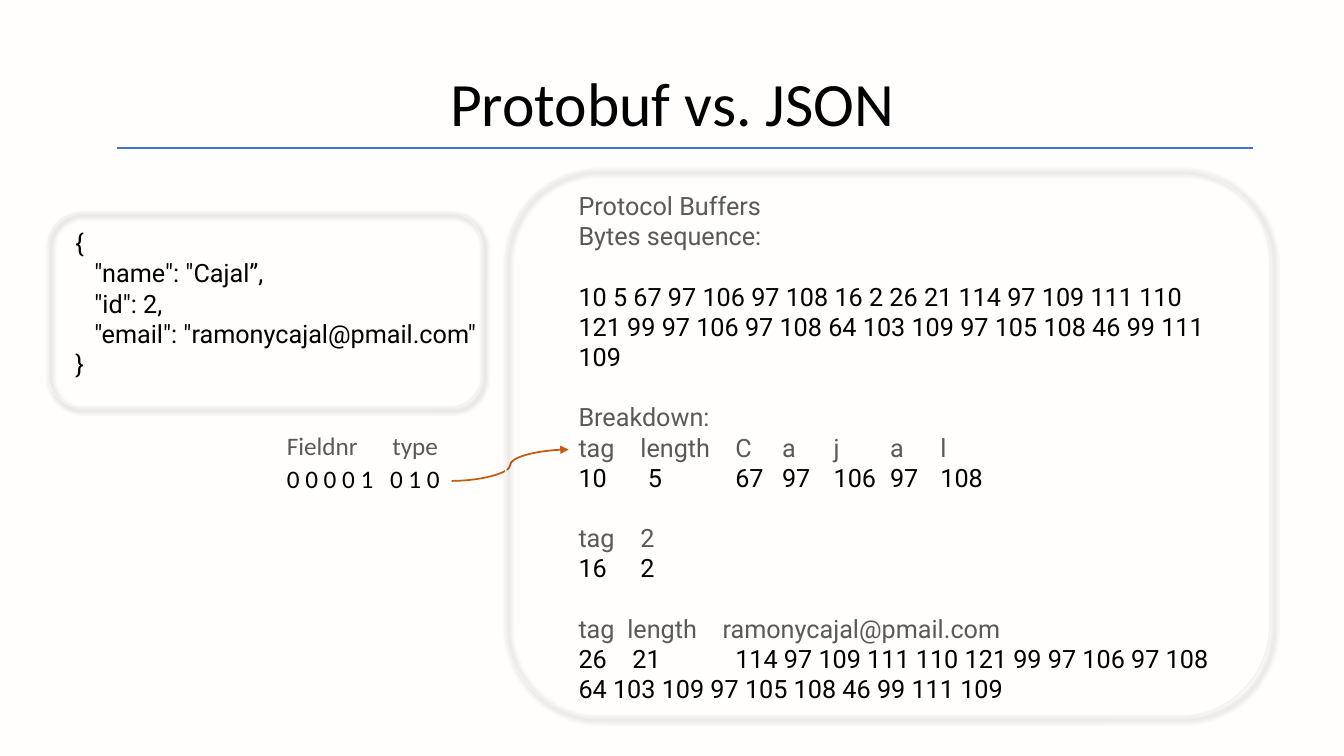
from collections import namedtuple

from lxml import etree
from pptx import Presentation
from pptx.dml.color import RGBColor
from pptx.enum.shapes import MSO_CONNECTOR, MSO_SHAPE
from pptx.enum.text import MSO_ANCHOR, PP_ALIGN
from pptx.oxml import parse_xml
from pptx.oxml.ns import nsdecls, qn
from pptx.util import Cm, Pt

CENTER = PP_ALIGN.CENTER
TOP = MSO_ANCHOR.TOP
ROUNDED = MSO_SHAPE.ROUNDED_RECTANGLE
STRAIGHT = MSO_CONNECTOR.STRAIGHT
CURVE = MSO_CONNECTOR.CURVE

CREAM = RGBColor(0xFF, 0xFE, 0xFC)
BLACK = RGBColor(0x00, 0x00, 0x00)
GRAY = RGBColor(0x59, 0x59, 0x59)
PALE = RGBColor(0xF2, 0xF2, 0xF2)
BLUE = RGBColor(0x44, 0x72, 0xC4)
RUST = RGBColor(0xC5, 0x5A, 0x11)

ROBOTO = {"name": "Roboto", "size": Pt(18)}
CALIBRI = {"name": "Calibri", "size": Pt(18)}
TITLE_FONT = {"name": "Calibri", "size": Pt(44), "bold": False}
SECTION_GAP = Pt(21.5)

Box = namedtuple("Box", "left top width height")
Row = namedtuple("Row", "text color tabs indent gap", defaults=(BLACK, (), 0, False))

EMAIL = "ramonycajal@pmail.com"
EMAIL_BYTES = "114 97 109 111 110 121 99 97 106 97 108 64 103 109 97 105 108 46 99 111 109"
LETTER_TABS = (3.95, 5.13, 6.43, 7.85, 9.12)

JSON_ROWS = [
    Row("{"),
    Row('"name": "Cajal”,', indent=0.48),
    Row('"id": 2,', indent=0.48),
    Row(f'"email": "{EMAIL}"', indent=0.48),
    Row("}"),
]
BYTE_ROWS = [
    Row("Protocol Buffers", GRAY),
    Row("Bytes sequence:", GRAY),
    Row(f"10 5 67 97 106 97 108 16 2 26 21 {EMAIL_BYTES}", gap=True),
    Row("Breakdown:", GRAY, gap=True),
    Row("tag\tlength\tC\ta\tj\ta\tl", GRAY, (1.56, *LETTER_TABS)),
    Row("10\t5\t67\t97\t106\t97\t108", BLACK, (1.75, *LETTER_TABS)),
    Row("tag\t2", GRAY, (1.56,), gap=True),
    Row("16\t2", BLACK, (1.56,)),
    Row(f"tag\tlength\t{EMAIL}", GRAY, (1.23, 3.63), gap=True),
    Row(f"26\t21\t{EMAIL_BYTES}", BLACK, (1.36, 3.95)),
]
FIELD_ROWS = [
    Row("Fieldnr\ttype", GRAY, (2.66,)),
    Row("0 0 0 0 1\t0 1 0", BLACK, (2.6,)),
]


def apply_font(span, color, values):
    for name, value in values.items():
        setattr(span.font, name, value)
    span.font.color.rgb = color


def add_rows(slide, box, rows, values):
    frame = slide.shapes.add_textbox(*map(Cm, box)).text_frame
    frame.word_wrap = True
    for index, row in enumerate(rows):
        para = frame.add_paragraph() if index else frame.paragraphs[0]
        if row.gap:
            para.space_before = SECTION_GAP
        span = para.add_run()
        span.text = row.text
        apply_font(span, row.color, values)
        properties = para._p.get_or_add_pPr()
        if row.indent:
            properties.set("marL", str(Cm(row.indent)))
        if row.tabs:
            stops = etree.SubElement(properties, qn("a:tabLst"))
            for position in row.tabs:
                etree.SubElement(stops, qn("a:tab"), pos=str(Cm(position)), algn="l")


def add_line(slide, kind, ends, color, width):
    line = slide.shapes.add_connector(kind, *map(Cm, ends))
    line.line.color.rgb = color
    line.line.width = Pt(width)
    etree.SubElement(line._element.spPr, qn("a:effectLst"))
    return line


def add_title(slide, box):
    title = slide.shapes.title
    title.left, title.top, title.width, title.height = map(Cm, box)
    frame = title.text_frame
    frame.vertical_anchor = TOP
    frame.word_wrap = True
    para = frame.paragraphs[0]
    para.alignment = CENTER
    para.line_spacing = 0.9
    span = para.add_run()
    span.text = "Protobuf vs. JSON"
    apply_font(span, BLACK, TITLE_FONT)
    rule_top = box.top + 2
    add_line(slide, STRAIGHT, (box.left + 0.61, rule_top, box.left + 29.23, rule_top), BLUE, 2)


def add_outline(slide, box):
    outline = slide.shapes.add_shape(ROUNDED, *map(Cm, box))
    outline.fill.background()
    outline.line.color.rgb = PALE
    outline.line.width = Pt(1)
    outline._element.spPr.append(parse_xml(
        f'<a:effectLst {nsdecls("a")}>'
        '<a:outerShdw blurRad="50800" dist="38100" dir="2700000" algn="tl" rotWithShape="0">'
        '<a:srgbClr val="000000"><a:alpha val="40000"/></a:srgbClr>'
        '</a:outerShdw></a:effectLst>'))


def add_json_panel(slide, box):
    add_rows(slide, Box(box.left + 0.43, box.top + 0.25, 10.69, 4.09), JSON_ROWS, ROBOTO)
    add_outline(slide, box)


def add_bytes_panel(slide, box):
    add_rows(slide, Box(box.left + 1.58, box.top + 0.38, 16.46, 13.34), BYTE_ROWS, ROBOTO)
    add_outline(slide, box)


def add_tag_bits(slide, box):
    row_height = box.height / len(FIELD_ROWS)
    for index, row in enumerate(FIELD_ROWS):
        row_box = Box(box.left, box.top + index * row_height, box.width, row_height)
        add_rows(slide, row_box, [row], CALIBRI)
    ends = (box.left + 4.4, box.top + 1.4, box.left + 7.35, box.top + 0.61)
    arrow = add_line(slide, CURVE, ends, RUST, 1.25)
    etree.SubElement(arrow.line._get_or_add_ln(), qn("a:tailEnd"), type="triangle")


def main():
    deck = Presentation()
    deck.slide_width, deck.slide_height = Cm(33.87), Cm(19.05)
    slide = deck.slides.add_slide(deck.slide_layouts[5])
    slide.background.fill.solid()
    slide.background.fill.fore_color.rgb = CREAM
    add_title(slide, Box(2.34, 1.73, 29.21, 3.68))
    add_tag_bits(slide, Box(6.98, 10.72, 5.82, 1.68))
    add_bytes_panel(slide, Box(12.75, 4.29, 19.25, 13.77))
    add_json_panel(slide, Box(1.22, 5.36, 10.92, 4.9))
    deck.save("out.pptx")


if __name__ == "__main__":
    main()
